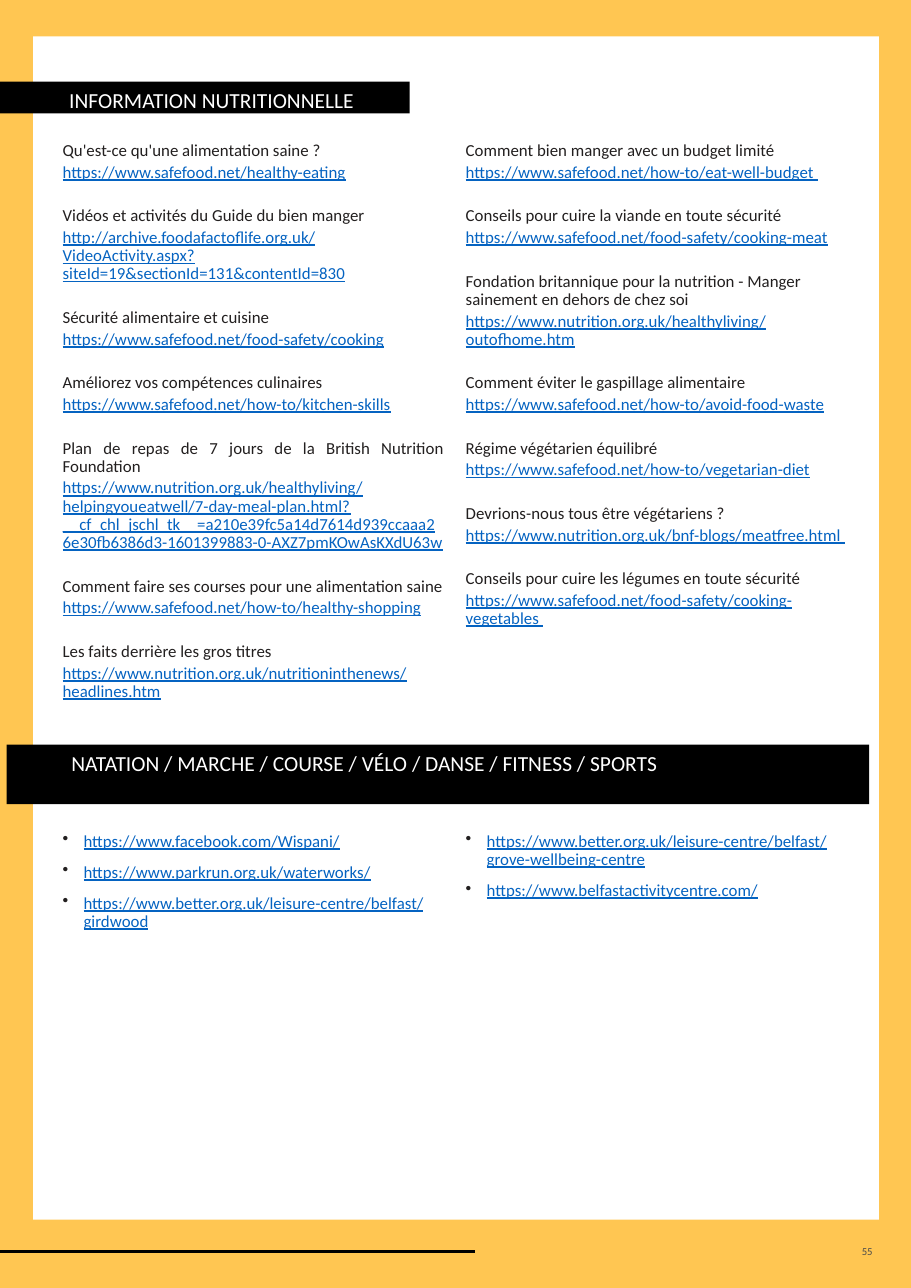
from pptx import Presentation
from pptx.dml.color import RGBColor
from pptx.enum.shapes import MSO_CONNECTOR as Connector, MSO_SHAPE as Shape
from pptx.enum.text import MSO_ANCHOR as Anchor, PP_ALIGN as Align
from pptx.oxml.ns import qn
from pptx.util import Inches, Pt
from lxml.etree import SubElement

YELLOW = RGBColor(0xFF, 0xC6, 0x52)
WHITE = RGBColor(0xFF, 0xFF, 0xFF)
BLACK = RGBColor(0x00, 0x00, 0x00)
INK = RGBColor(0x22, 0x1F, 0x1F)
LINK_BLUE = RGBColor(0x05, 0x63, 0xC1)
GREY = RGBColor(0x4B, 0x4B, 0x4B)

WIDTH, HEIGHT = 8.27, 11.69
LABEL = {"size": Pt(11), "color": INK}
LINK = {"size": Pt(11), "color": LINK_BLUE, "underline": True}
HEADING = {"size": Pt(14), "color": WHITE}
PAGE_NUMBER = {"size": Pt(7), "color": GREY}

NUTRITION = [
    [
        ("Qu'est-ce qu'une alimentation saine ?",
         "https://www.safefood.net/healthy-eating"),
        ("Vidéos et activités du Guide du bien manger",
         "http://archive.foodafactoflife.org.uk/VideoActivity.aspx?siteId=19&sectionId=131&contentId=830"),
        ("Sécurité alimentaire et cuisine",
         "https://www.safefood.net/food-safety/cooking"),
        ("Améliorez vos compétences culinaires",
         "https://www.safefood.net/how-to/kitchen-skills"),
        ("Plan de repas de 7 jours de la British Nutrition Foundation",
         "https://www.nutrition.org.uk/healthyliving/helpingyoueatwell/7-day-meal-plan.html?"
         "__cf_chl_jschl_tk__=a210e39fc5a14d7614d939ccaaa26e30fb6386d3-1601399883-0-AXZ7pmKOwAsKXdU63w"),
        ("Comment faire ses courses pour une alimentation saine",
         "https://www.safefood.net/how-to/healthy-shopping"),
        ("Les faits derrière les gros titres",
         "https://www.nutrition.org.uk/nutritioninthenews/headlines.htm"),
    ],
    [
        ("Comment bien manger avec un budget limité",
         "https://www.safefood.net/how-to/eat-well-budget "),
        ("Conseils pour cuire la viande en toute sécurité",
         "https://www.safefood.net/food-safety/cooking-meat"),
        ("Fondation britannique pour la nutrition - Manger sainement en dehors de chez soi",
         "https://www.nutrition.org.uk/healthyliving/outofhome.htm"),
        ("Comment éviter le gaspillage alimentaire",
         "https://www.safefood.net/how-to/avoid-food-waste"),
        ("Régime végétarien équilibré",
         "https://www.safefood.net/how-to/vegetarian-diet"),
        ("Devrions-nous tous être végétariens ?",
         "https://www.nutrition.org.uk/bnf-blogs/meatfree.html "),
        ("Conseils pour cuire les légumes en toute sécurité",
         "https://www.safefood.net/food-safety/cooking-vegetables "),
    ],
]
LEFT_ALIGNED = {NUTRITION[1][2][0]}

SPORTS = [
    [
        "https://www.facebook.com/Wispani/",
        "https://www.parkrun.org.uk/waterworks/",
        "https://www.better.org.uk/leisure-centre/belfast/girdwood",
    ],
    [
        "https://www.better.org.uk/leisure-centre/belfast/grove-wellbeing-centre",
        "https://www.belfastactivitycentre.com/",
    ],
]


def write(para, text, style, **layout):
    for name, value in layout.items():
        setattr(para, name, value)
    span = para.add_run()
    span.text = text
    span.font.name = "Calibri"
    for name, value in style.items():
        if name == "color":
            span.font.color.rgb = value
        else:
            setattr(span.font, name, value)


def add_para(frame, first):
    return frame.paragraphs[0] if first else frame.add_paragraph()


def indent(para, margin, first_line=0):
    props = para._p.get_or_add_pPr()
    props.set("marL", str(Inches(margin)))
    props.set("indent", str(Inches(first_line)))
    return props


def add_bullet(para):
    props = indent(para, 0.19, -0.19)
    color = SubElement(props, qn("a:buClr"))
    SubElement(color, qn("a:srgbClr")).set("val", str(INK))
    SubElement(props, qn("a:buChar")).set("char", "•")


def add_rect(page, box, color):
    rect = page.shapes.add_shape(Shape.RECTANGLE, *map(Inches, box))
    rect.shadow.inherit = False
    rect.fill.solid()
    rect.fill.fore_color.rgb = color
    rect.line.fill.background()
    return rect


def add_text_frame(page, box):
    frame = page.shapes.add_textbox(*map(Inches, box)).text_frame
    frame.word_wrap = True
    return frame


def split_columns(box):
    left, top, width, height = box
    return [(left + i * width / 2, top, width / 2, height) for i in range(2)]


def add_frame(page, box):
    left, top, width, height = box
    add_rect(page, box, YELLOW)
    add_rect(page, (left + 0.3, top + 0.33, width - 0.59, height - 0.95), WHITE)


def add_footer(page, box, number):
    left, top, width, height = box
    middle = Inches(top + height / 2)
    rule = page.shapes.add_connector(
        Connector.STRAIGHT, Inches(left), middle, Inches(left + 4.31), middle)
    rule.line.color.rgb = BLACK
    rule.line.width = Pt(1.5)
    SubElement(rule._element.spPr, qn("a:effectLst"))
    frame = add_text_frame(page, (left + width - 1.33, top, 1.08, height))
    frame.margin_top = frame.margin_bottom = 0
    frame.vertical_anchor = Anchor.MIDDLE
    write(frame.paragraphs[0], number, PAGE_NUMBER, alignment=Align.RIGHT)


def add_heading(page, box, text, margin):
    frame = add_rect(page, box, BLACK).text_frame
    frame.vertical_anchor = Anchor.TOP
    para = frame.paragraphs[0]
    indent(para, margin)
    write(para, text, HEADING, alignment=Align.LEFT)


def add_nutrition(page, box):
    for column, entries in zip(split_columns(box), NUTRITION):
        frame = add_text_frame(page, column)
        for i, (label, link) in enumerate(entries):
            layout = {
                "alignment": Align.LEFT if label in LEFT_ALIGNED else Align.JUSTIFY,
                "line_spacing": 0.9,
            }
            write(add_para(frame, i == 0), label, LABEL,
                  space_before=Pt(16.6 if i else 0), **layout)
            write(add_para(frame, False), link, LINK, space_before=Pt(2.3), **layout)


def add_sports(page, box):
    for column, links in zip(split_columns(box), SPORTS):
        frame = add_text_frame(page, column)
        for i, link in enumerate(links):
            para = add_para(frame, i == 0)
            add_bullet(para)
            write(para, link, LINK, alignment=Align.JUSTIFY, line_spacing=0.9,
                  space_before=Pt(8.3 if i else 0))


def main():
    deck = Presentation()
    deck.slide_width, deck.slide_height = Inches(WIDTH), Inches(HEIGHT)
    page = deck.slides.add_slide(deck.slide_layouts[6])
    add_frame(page, (0, 0, WIDTH, HEIGHT))
    add_footer(page, (0, 11.28, WIDTH, 0.16), "55")
    add_heading(page, (0, 0.74, 3.72, 0.29), "INFORMATION NUTRITIONNELLE", 0.53)
    add_nutrition(page, (0.47, 1.24, 7.32, 5.19))
    add_heading(page, (0.06, 6.76, 7.83, 0.54),
                "NATATION / MARCHE / COURSE / VÉLO / DANSE / FITNESS / SPORTS", 0.49)
    add_sports(page, (0.47, 7.51, 7.32, 1.12))
    deck.save("out.pptx")


if __name__ == "__main__":
    main()
